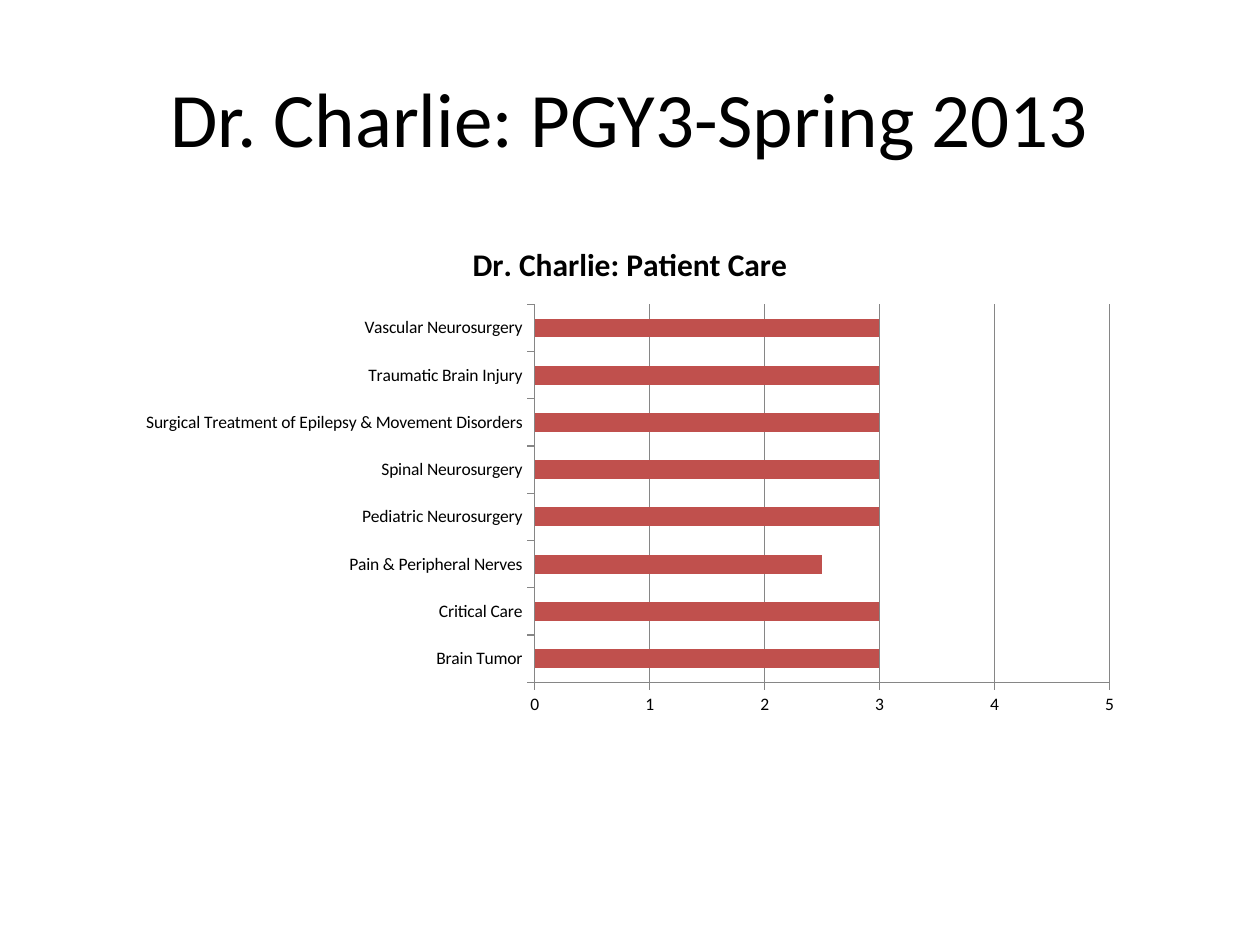
from dataclasses import dataclass

from pptx import Presentation
from pptx.chart.data import CategoryChartData
from pptx.dml.color import RGBColor
from pptx.enum.chart import XL_CHART_TYPE, XL_TICK_MARK
from pptx.enum.text import MSO_ANCHOR, PP_ALIGN
from pptx.util import Inches, Pt

BAR_CLUSTERED = XL_CHART_TYPE.BAR_CLUSTERED
TICK_OUTSIDE = XL_TICK_MARK.OUTSIDE
MIDDLE = MSO_ANCHOR.MIDDLE
CENTER = PP_ALIGN.CENTER


@dataclass(frozen=True)
class Theme:
    font: str = "Calibri"
    text: RGBColor = RGBColor(0x00, 0x00, 0x00)
    bar: RGBColor = RGBColor(0xC0, 0x50, 0x4D)
    line: RGBColor = RGBColor(0x86, 0x86, 0x86)
    heading_size: Pt = Pt(44)
    chart_title_size: Pt = Pt(18)
    label_size: Pt = Pt(10)
    line_width: Pt = Pt(0.75)


theme = Theme()


def apply_format(target, values):
    for name, value in values.items():
        setattr(target, name, value)


def style_font(font, size, bold=False):
    apply_format(font, {"name": theme.font, "size": size, "bold": bold})
    font.color.rgb = theme.text


ratings = {
    "Brain Tumor": 3,
    "Critical Care": 3,
    "Pain & Peripheral Nerves": 2.5,
    "Pediatric Neurosurgery": 3,
    "Spinal Neurosurgery": 3,
    "Surgical Treatment of Epilepsy & Movement Disorders": 3,
    "Traumatic Brain Injury": 3,
    "Vascular Neurosurgery": 3,
}

deck = Presentation()
apply_format(deck, {"slide_width": Inches(10), "slide_height": Inches(7.5)})
slide = deck.slides.add_slide(deck.slide_layouts[5])

heading = slide.shapes.title
apply_format(heading, {
    "left": Inches(0.5),
    "top": Inches(0.3),
    "width": Inches(9),
    "height": Inches(1.25),
})
heading.text_frame.text = "Dr. Charlie: PGY3-Spring 2013"
heading.text_frame.vertical_anchor = MIDDLE
heading_line = heading.text_frame.paragraphs[0]
heading_line.alignment = CENTER
style_font(heading_line.runs[0].font, theme.heading_size)

care_data = CategoryChartData()
care_data.categories = list(ratings)
care_data.add_series("Series 1", list(ratings.values()))
care_chart = slide.shapes.add_chart(
    BAR_CLUSTERED, Inches(1), Inches(1.75), Inches(8), Inches(4), care_data
).chart
apply_format(care_chart, {"has_legend": False, "has_title": True})
style_font(care_chart.font, theme.label_size)

care_title = care_chart.chart_title
care_title.include_in_layout = False
care_title.text_frame.text = "Dr. Charlie: Patient Care"
style_font(care_title.text_frame.paragraphs[0].runs[0].font, theme.chart_title_size, True)

bars = care_chart.plots[0]
apply_format(bars, {"gap_width": 150, "vary_by_categories": False})
bar_fill = bars.series[0].format.fill
bar_fill.solid()
bar_fill.fore_color.rgb = theme.bar

specialties = care_chart.category_axis
scores = care_chart.value_axis
apply_format(specialties, {"major_tick_mark": TICK_OUTSIDE, "has_major_gridlines": False})
apply_format(scores, {
    "minimum_scale": 0,
    "maximum_scale": 5,
    "major_unit": 1,
    "major_tick_mark": TICK_OUTSIDE,
    "has_major_gridlines": True,
})
apply_format(scores.tick_labels, {"number_format": "0", "number_format_is_linked": False})

for ruled in (specialties, scores, scores.major_gridlines):
    ruled.format.line.color.rgb = theme.line
    ruled.format.line.width = theme.line_width

deck.save("out.pptx")
